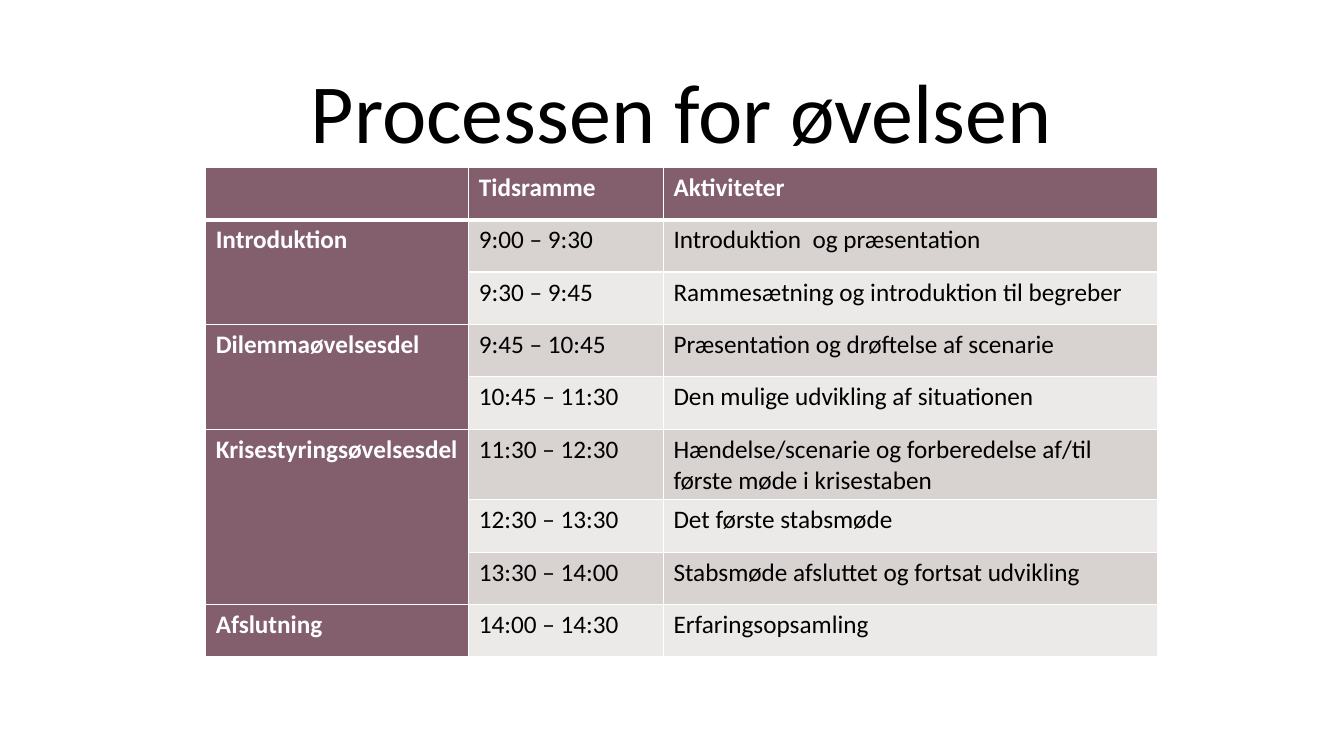
from pptx import Presentation
from pptx.dml.color import RGBColor
from pptx.enum.text import MSO_ANCHOR as Anchor, PP_ALIGN as Align
from pptx.oxml import parse_xml
from pptx.oxml.ns import nsdecls
from pptx.util import Inches, Pt

PLUM = RGBColor(0x83, 0x5E, 0x6D)
DARK_BAND = RGBColor(0xD8, 0xD2, 0xD1)
LIGHT_BAND = RGBColor(0xEC, 0xEA, 0xE9)
WHITE = RGBColor(0xFF, 0xFF, 0xFF)
BLACK = RGBColor(0x00, 0x00, 0x00)
FONT = "Calibri"

HEADINGS = ["", "Tidsramme", "Aktiviteter"]
PHASES = [
    ("Introduktion", [
        ("9:00 – 9:30", "Introduktion  og præsentation"),
        ("9:30 – 9:45", "Rammesætning og introduktion til begreber"),
    ]),
    ("Dilemmaøvelsesdel", [
        ("9:45 – 10:45", "Præsentation og drøftelse af scenarie"),
        ("10:45 – 11:30", "Den mulige udvikling af situationen"),
    ]),
    ("Krisestyringsøvelsesdel", [
        ("11:30 – 12:30", "Hændelse/scenarie og forberedelse af/til første møde i krisestaben"),
        ("12:30 – 13:30", "Det første stabsmøde"),
        ("13:30 – 14:00", "Stabsmøde afsluttet og fortsat udvikling"),
    ]),
    ("Afslutning", [("14:00 – 14:30", "Erfaringsopsamling")]),
]
COLUMN_WIDTHS = [2.61, 1.93, 4.9]
ROW_HEIGHT = 0.52


def add_run(paragraph, text, size, color, bold=False):
    run = paragraph.add_run()
    run.text = text
    run.font.name = FONT
    run.font.size = Pt(size)
    run.font.bold = bold
    run.font.color.rgb = color


def set_borders(cell, widths):
    properties = cell._tc.get_or_add_tcPr()
    for index, (side, width) in enumerate(zip("LRTB", widths)):
        line = parse_xml(
            f'<a:ln{side} {nsdecls("a")} w="{Pt(width)}"><a:solidFill>'
            f'<a:srgbClr val="{WHITE}"/></a:solidFill></a:ln{side}>')
        properties.insert(index, line)


def fill_cell(cell, text, fill, color, bold):
    cell.fill.solid()
    cell.fill.fore_color.rgb = fill
    paragraph = cell.text_frame.paragraphs[0]
    if text:
        add_run(paragraph, text, 18, color, bold)
    else:
        paragraph.font.size = Pt(18)


def add_title(slide, left, top, width, height):
    box = slide.shapes.add_textbox(Inches(left), Inches(top), Inches(width), Inches(height))
    frame = box.text_frame
    frame.word_wrap = True
    frame.vertical_anchor = Anchor.BOTTOM
    paragraph = frame.paragraphs[0]
    paragraph.alignment = Align.CENTER
    paragraph.line_spacing = 0.9
    add_run(paragraph, "Processen for øvelsen", 60, BLACK)


def add_schedule(slide, left, top):
    row_count = 1 + sum(len(activities) for _, activities in PHASES)
    shape = slide.shapes.add_table(
        row_count, len(HEADINGS), Inches(left), Inches(top),
        Inches(sum(COLUMN_WIDTHS)), Inches(ROW_HEIGHT * row_count))
    table = shape.table
    table.first_col = True
    for column, width in zip(table.columns, COLUMN_WIDTHS):
        column.width = Inches(width)
    for row in table.rows:
        row.height = Inches(ROW_HEIGHT)

    for column, heading in enumerate(HEADINGS):
        fill_cell(table.cell(0, column), heading, PLUM, WHITE, True)
    row = 1
    for phase, activities in PHASES:
        first_row = row
        for time, activity in activities:
            band = DARK_BAND if row % 2 else LIGHT_BAND
            label = phase if row == first_row else ""
            fill_cell(table.cell(row, 0), label, PLUM, WHITE, True)
            fill_cell(table.cell(row, 1), time, band, BLACK, False)
            fill_cell(table.cell(row, 2), activity, band, BLACK, False)
            row += 1
        if len(activities) > 1:
            table.cell(first_row, 0).merge(table.cell(row - 1, 0))

    for row in range(row_count):
        widths = (1, 1, 3 if row == 1 else 1, 3 if row == 0 else 1)
        for column in range(len(HEADINGS)):
            set_borders(table.cell(row, column), widths)


def main():
    presentation = Presentation()
    presentation.slide_width = Inches(13.33)
    presentation.slide_height = Inches(7.5)
    slide = presentation.slides.add_slide(presentation.slide_layouts[6])
    add_title(slide, 1.76, 0.51, 10, 1.14)
    add_schedule(slide, 2.04, 1.66)
    presentation.save("out.pptx")


if __name__ == "__main__":
    main()
